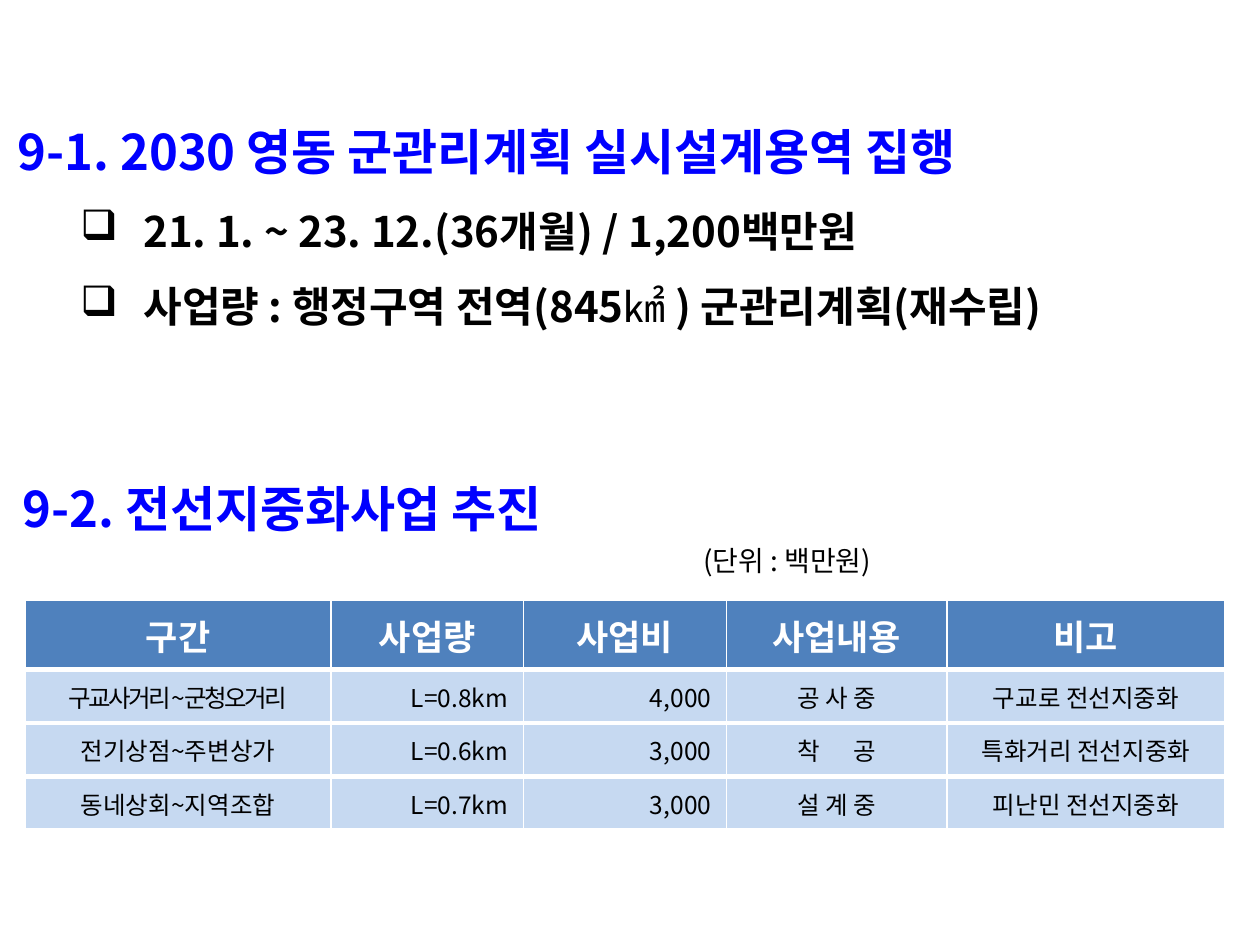
from lxml import etree
from pptx import Presentation
from pptx.dml.color import RGBColor
from pptx.enum.text import MSO_ANCHOR, MSO_AUTO_SIZE, PP_ALIGN
from pptx.oxml.ns import qn
from pptx.util import Pt

LEFT, MID, RIGHT = PP_ALIGN.LEFT, PP_ALIGN.CENTER, PP_ALIGN.RIGHT
JUST = PP_ALIGN.JUSTIFY
CENTRE = MSO_ANCHOR.MIDDLE
GROW, FIXED = MSO_AUTO_SIZE.SHAPE_TO_FIT_TEXT, MSO_AUTO_SIZE.NONE

FONT = "Noto Sans CJK KR"
HUES = {"blue": "0000FF", "black": "000000", "white": "FFFFFF",
        "head": "4F81BD", "body": "C6D9F1"}

# Text looks: size, weight and colour
TITLE = {"size": 28, "bold": True, "hue": "blue"}
ITEM = {"size": 24, "bold": True, "hue": "black"}
PLAIN = {**ITEM, "bold": False}
UNIT = {"size": 16, "bold": False, "hue": "black"}
HEAD = {"size": 20, "bold": True, "hue": "white"}
BODY = {"size": 14, "bold": False, "hue": "black"}
TIGHT = {**BODY, "track": -1.5}
WIDE = {**BODY, "track": 16}

COLS = [174.7, 110, 116, 126, 159]
ROWS = [39.6, 30.6, 30.6, 30.6]
ALIGNS = [MID, RIGHT, RIGHT, MID, MID]
NAMES = ["구간", "사업량", "사업비", "사업내용", "비고"]
WORKS = [
    [[("구교사거리~군청오거리", TIGHT)], "L=0.8km", "4,000", "공 사 중",
     "구교로 전선지중화"],
    ["전기상점~주변상가", "L=0.6km", "3,000",
     [("착", BODY), (" ", WIDE), ("공", BODY)], "특화거리 전선지중화"],
    ["동네상회~지역조합", "L=0.7km", "3,000", "설 계 중",
     "피난민 전선지중화"],
]


def colour(name):
    return RGBColor.from_string(HUES[name])


def add_run(para, text, look):
    run = para.add_run()
    run.text = text
    values = {"name": FONT, "size": Pt(look["size"]), "bold": look["bold"]}
    for key, value in values.items():
        setattr(run.font, key, value)
    run.font.color.rgb = colour(look["hue"])
    props = run.font._element
    etree.SubElement(props, qn("a:ea"), typeface=FONT)
    if "track" in look:
        props.set("spc", str(int(look["track"] * 100)))


def fill_para(para, runs, **form):
    for key, value in form.items():
        setattr(para, key, value)
    for text, look in runs:
        add_run(para, text, look)


def indent(para, left, first=0):
    props = para._p.get_or_add_pPr()
    props.set("marL", str(Pt(left)))
    props.set("indent", str(Pt(first)))
    return props


def add_bullet(para):
    props = indent(para, 72, -36)
    tint = etree.SubElement(props, qn("a:buClr"))
    etree.SubElement(tint, qn("a:srgbClr"), val=HUES["black"])
    etree.SubElement(props, qn("a:buChar"), char="❑")


def add_box(slide, left, top, width, height, fit):
    box = slide.shapes.add_textbox(Pt(left), Pt(top), Pt(width), Pt(height))
    frame = box.text_frame
    frame.word_wrap = True
    frame.auto_size = fit
    return frame


def set_edges(cell, top):
    props = cell._tc.get_or_add_tcPr()
    for side, width in {"L": 1, "R": 1, "T": top, "B": 3}.items():
        line = etree.SubElement(props, qn("a:ln" + side), w=str(Pt(width)))
        fill = etree.SubElement(line, qn("a:solidFill"))
        etree.SubElement(fill, qn("a:srgbClr"), val=HUES["white"])


def fill_cell(cell, runs, align, is_head):
    set_edges(cell, 1 if is_head else 3)
    cell.fill.solid()
    cell.fill.fore_color.rgb = colour("head" if is_head else "body")
    cell.vertical_anchor = CENTRE
    cell.margin_left = cell.margin_right = Pt(7.2 if is_head else 8.64)
    if isinstance(runs, str):
        runs = [(runs, HEAD if is_head else BODY)]
    fill_para(cell.text_frame.paragraphs[0], runs, alignment=align)


def add_works(slide):
    grid = [NAMES] + WORKS
    table = slide.shapes.add_table(
        len(ROWS), len(COLS), Pt(14.4), Pt(343),
        Pt(sum(COLS)), Pt(sum(ROWS))).table
    for col, width in zip(table.columns, COLS):
        col.width = Pt(width)
    for i, (row, height) in enumerate(zip(table.rows, ROWS)):
        row.height = Pt(height)
        for cell, runs, align in zip(row.cells, grid[i], ALIGNS):
            fill_cell(cell, runs, align if i else MID, i == 0)


def add_plan(slide):
    frame = add_box(slide, 2.9, 49, 720, 136, FIXED)
    fill_para(frame.paragraphs[0],
              [("9-1. 2030 영동 군관리계획 실시설계용역 집행", TITLE)],
              line_spacing=1.5, alignment=LEFT)
    items = [
        [("21. 1. ~ 23. 12.(36개월) / 1,200백만원", ITEM)],
        [("사업량 : 행정구역 전역(845", ITEM), ("㎢", PLAIN),
         (" ) 군관리계획(재수립)", ITEM)],
    ]
    for runs in items:
        para = frame.add_paragraph()
        add_bullet(para)
        fill_para(para, runs, level=1, line_spacing=1.5, alignment=JUST)


def add_title(slide):
    frame = add_box(slide, 5.8, 270, 711, 65, GROW)
    fill_para(frame.paragraphs[0], [("9-2. 전선지중화사업 추진", TITLE)],
              alignment=LEFT)
    unit = frame.add_paragraph()
    indent(unit, 389)
    fill_para(unit, [("(단위 : 백만원)", UNIT)],
              alignment=LEFT, space_before=Pt(3.2))


def main():
    deck = Presentation()
    deck.slide_width, deck.slide_height = Pt(720), Pt(540)
    slide = deck.slides.add_slide(deck.slide_layouts[6])
    add_works(slide)   # table of cable works
    add_title(slide)   # section 9-2 and its unit
    add_plan(slide)    # section 9-1
    deck.save("out.pptx")


if __name__ == "__main__":
    main()
